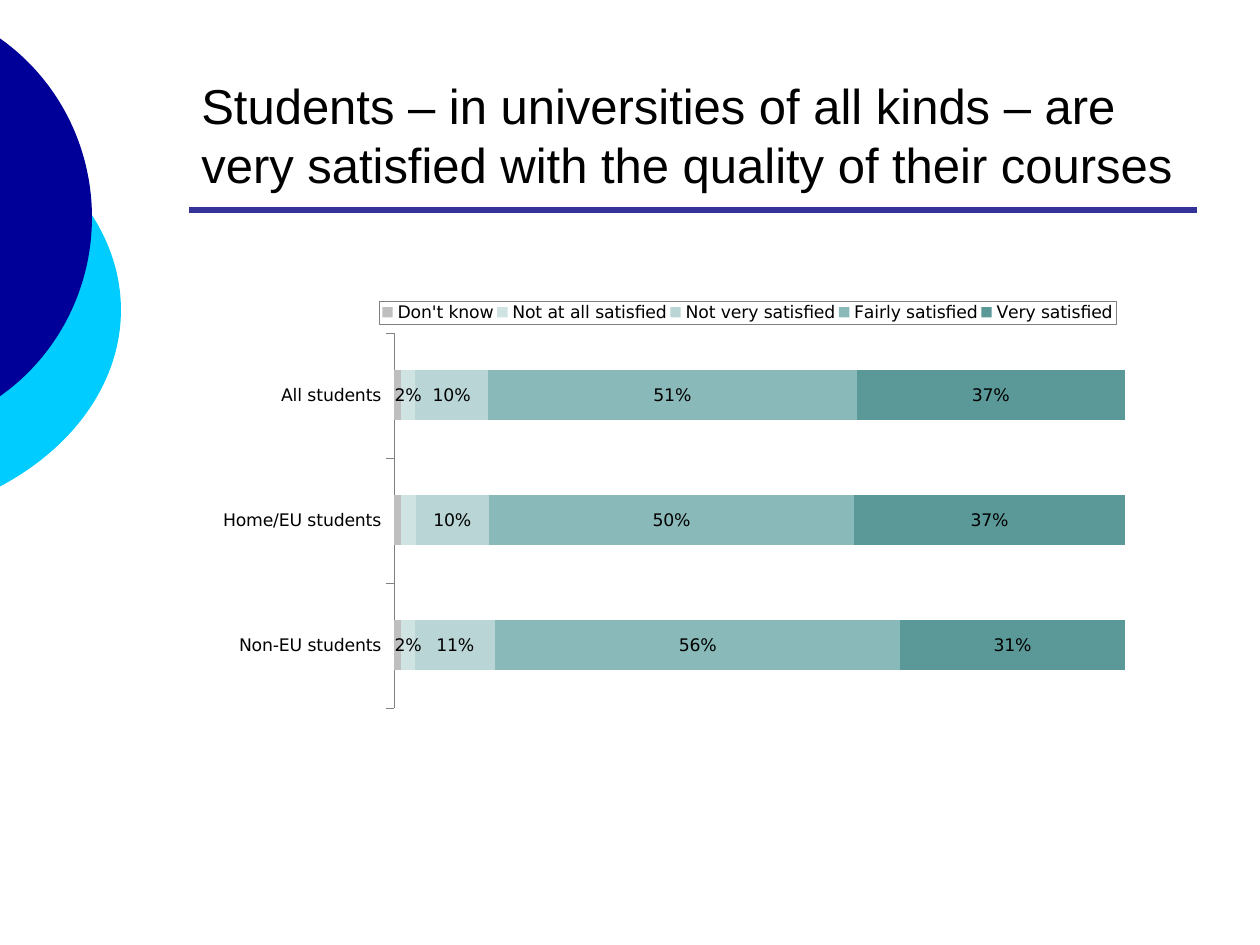
from pptx import Presentation
from pptx.chart.data import CategoryChartData
from pptx.dml.color import RGBColor
from pptx.enum.chart import (XL_CHART_TYPE, XL_LEGEND_POSITION as LEGEND_AT,
                             XL_TICK_LABEL_POSITION as LABELS_AT, XL_TICK_MARK as TICK)
from pptx.enum.shapes import MSO_CONNECTOR, MSO_SHAPE
from pptx.enum.text import MSO_ANCHOR
from pptx.oxml import parse_xml
from pptx.oxml.ns import nsdecls, qn
from pptx.util import Inches, Pt

TITLE = "Students – in universities of all kinds – are very satisfied with the quality of their courses"
GROUPS = ["All students", "Home/EU students", "Non-EU students"]
ANSWERS = [  # name, shares, colour, labelled
    ("Don't know", (0.01, 0.01, 0.01), "BFBFBF", False),
    ("Not at all satisfied", (0.02, 0.02, 0.02), "D0E3E3", True),
    ("Not very satisfied", (0.10, 0.10, 0.11), "B9D5D5", True),
    ("Fairly satisfied", (0.51, 0.50, 0.56), "8AB9B9", True),
    ("Very satisfied", (0.37, 0.37, 0.31), "5B9898", True),
]
# Boxes in inches: left, top, width, height
CYAN_DISC = (-3.54, 0.75, 4.5, 3.42)
NAVY_DISC = (-2.65, 0, 3.38, 3.45)
TITLE_BOX = (1.5, 0.33, 8, 1.25)
CHART_BOX = (1.77, 2.22, 7.4, 3.57)
RULE_Y = 1.67


def colour(hex_string):
    return RGBColor.from_string(hex_string)


def add_disc(slide, box, fill):
    """Place an ellipse that bleeds off the slide's left edge."""
    disc = slide.shapes.add_shape(MSO_SHAPE.OVAL, *map(Inches, box))
    disc.shadow.inherit = False
    disc.fill.solid()
    disc.fill.fore_color.rgb = colour(fill)
    disc.line.fill.background()


def add_heading(slide, box):
    left, top, width, height = box
    # Rule under the title
    rule = slide.shapes.add_connector(MSO_CONNECTOR.STRAIGHT, Inches(left), Inches(RULE_Y),
                                      Inches(left + width), Inches(RULE_Y))
    rule.line.color.rgb = colour("333399")
    rule.line.width = Pt(3.5)
    rule._element.spPr.append(parse_xml(f"<a:effectLst {nsdecls('a')}/>"))
    # Title text
    frame = slide.shapes.add_textbox(*map(Inches, box)).text_frame
    frame.word_wrap = True
    frame.vertical_anchor = MSO_ANCHOR.BOTTOM
    frame.text = TITLE
    font = frame.paragraphs[0].runs[0].font
    font.name, font.size = "Arial", Pt(28)
    font.color.rgb = colour("000000")


def manual_layout(x, y, w, h, inner=False):
    target = '<c:layoutTarget val="inner"/>' if inner else ""
    sizes = "".join(f'<c:{key} val="{value}"/>' for key, value in zip("xywh", (x, y, w, h)))
    return parse_xml(f"<c:layout {nsdecls('c')}><c:manualLayout>{target}"
                     '<c:xMode val="edge"/><c:yMode val="edge"/>'
                     f"{sizes}</c:manualLayout></c:layout>")


def replace_layout(parent, layout, index):
    for old in parent.findall(qn("c:layout")):
        parent.remove(old)
    parent.insert(index, layout)


def style_legend(chart):
    chart.has_legend = True
    legend = chart.legend
    legend.position = LEGEND_AT.TOP
    legend.include_in_layout = False
    element = legend._element
    replace_layout(element, manual_layout(0.164, 0.047, 0.794, 0.051), 1)
    element.find(qn("c:overlay")).addnext(parse_xml(
        f"<c:spPr {nsdecls('c', 'a')}><a:ln w=\"3175\"><a:solidFill>"
        '<a:srgbClr val="808080"/></a:solidFill></a:ln></c:spPr>'))


def style_series(series, fill, labelled):
    series.format.fill.solid()
    series.format.fill.fore_color.rgb = colour(fill)
    if labelled:
        labels = series.data_labels
        labels.show_value = True
        labels.number_format, labels.number_format_is_linked = "0%", False


def hide_label(series, point):
    series.data_labels._element.insert(0, parse_xml(
        f"<c:dLbl {nsdecls('c')}><c:idx val=\"{point}\"/><c:delete val=\"1\"/></c:dLbl>"))


def add_satisfaction_chart(slide, box):
    data = CategoryChartData(number_format="0%")
    data.categories = GROUPS
    for name, shares, _, _ in ANSWERS:
        data.add_series(name, shares)
    chart = slide.shapes.add_chart(XL_CHART_TYPE.BAR_STACKED_100, *map(Inches, box), data).chart
    chart.has_title = False
    chart.font.name, chart.font.size = "DejaVu Sans", Pt(9.9)
    chart.font.color.rgb = colour("000000")

    # Bars
    plot = chart.plots[0]
    plot.gap_width, plot.overlap, plot.vary_by_categories = 150, 100, False
    for series, (_, _, fill, labelled) in zip(plot.series, ANSWERS):
        style_series(series, fill, labelled)
    hide_label(plot.series[1], GROUPS.index("Home/EU students"))
    replace_layout(chart._chartSpace.chart.plotArea,
                   manual_layout(0.18, 0.118, 0.787, 0.834, inner=True), 0)

    # Axes
    groups, shares = chart.category_axis, chart.value_axis
    groups.reverse_order = True
    groups.major_tick_mark, groups.minor_tick_mark = TICK.OUTSIDE, TICK.NONE
    groups.tick_label_position = LABELS_AT.LOW
    groups.has_major_gridlines = False
    groups.format.line.color.rgb = colour("808080")
    groups.format.line.width = Pt(0.25)
    shares.minimum_scale, shares.maximum_scale = 0, 1
    shares.has_major_gridlines = False
    shares.visible = False

    style_legend(chart)


def main():
    deck = Presentation()
    deck.slide_width, deck.slide_height = Inches(10), Inches(7.5)
    slide = deck.slides.add_slide(deck.slide_layouts[6])
    add_disc(slide, CYAN_DISC, "00CCFF")
    add_disc(slide, NAVY_DISC, "000099")
    add_heading(slide, TITLE_BOX)
    add_satisfaction_chart(slide, CHART_BOX)
    deck.save("out.pptx")


if __name__ == "__main__":
    main()
